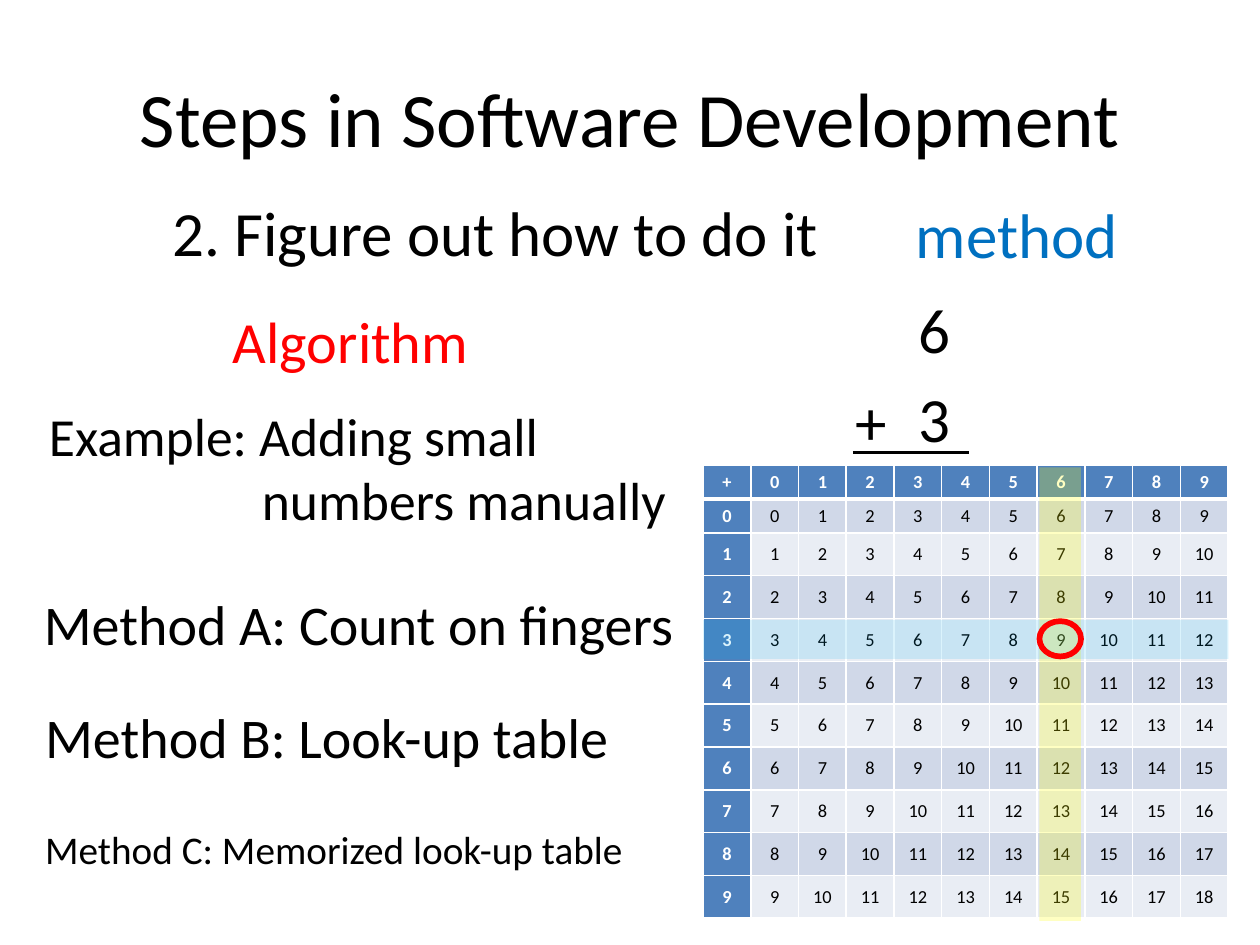
from lxml.etree import SubElement
from pptx import Presentation
from pptx.dml.color import RGBColor
from pptx.enum.shapes import MSO_CONNECTOR, MSO_SHAPE
from pptx.enum.text import MSO_ANCHOR as Anchor, PP_ALIGN as Align
from pptx.oxml.ns import qn
from pptx.util import Inches, Pt

FONT = "Calibri"
BLACK, WHITE, RED, HEADER = "000000", "FFFFFF", "FF0000", "4F81BD"
BANDS = ("D0D8E8", "E9EDF4")
TITLE = "Steps in Software Development"
LABELS = [
    ("2. Figure out how to do it", (1.27, 1.49, 6.39, 0.88), 36, BLACK),
    ("Algorithm", (1.75, 2.37, 2.26, 0.57), 33.3, RED),
    ("method", (7.17, 1.5, 1.92, 0.72), 36, "0070C0"),
]
METHODS = [
    ("Example: Adding small numbers manually", (0.29, 3.15, 5.33, 1.28), 30.6),
    ("Method A: Count on fingers", (0.25, 4.63, 5.33, 0.72), 32),
    ("Method B: Look-up table", (0.26, 5.53, 4.83, 0.72), 32),
    ("Method C: Memorized look-up table", (0.26, 6.5, 5.22, 0.5), 22.4),
]
SUM = [("6\n3", (7.19, 2.26, 0.5, 1.5)), ("+", (6.69, 2.99, 0.5, 0.75))]
SUM_LINE = (6.77, 3.59, 7.69, 3.59)
DIGITS = range(10)
SUMS = [["+", *DIGITS]] + [[row, *(row + column for column in DIGITS)] for row in DIGITS]
TABLE_AT = (5.58, 3.69, 4.17, 3.6)
ROW_HEIGHTS = [0.27] * 2 + [0.34] * 9
HIGHLIGHTS = [("FFFF00", 24, (8.25, 3.71, 0.33, 3.6)), ("00B0F0", 14, (5.58, 4.92, 4.17, 0.31))]
ANSWER_AT = (8.25, 4.93, 0.33, 0.28)


def inches(values):
    return [Inches(value) for value in values]


def color(value):
    return RGBColor.from_string(value)


def write(para, text, size, shade=BLACK, bold=False):
    span = para.add_run()
    span.text = str(text)
    for name, value in {"name": FONT, "size": Pt(size), "bold": bold}.items():
        setattr(span.font, name, value)
    span.font.color.rgb = color(shade)
    return span


def add_text(shapes, text, place, size, shade=BLACK, hanging=0):
    box = shapes.add_textbox(*inches(place))
    frame = box.text_frame
    frame.word_wrap = True
    for index, line in enumerate(text.split("\n")):
        para = frame.add_paragraph() if index else frame.paragraphs[0]
        if index:
            para.space_before = Pt(size * 0.2)
        if hanging:
            layout = para._p.get_or_add_pPr()
            layout.set("marL", str(Inches(hanging)))
            layout.set("indent", str(-Inches(hanging)))
        write(para, line, size, shade)
    return box


def add_border(cell, side, width):
    line = SubElement(cell._tc.get_or_add_tcPr(), qn(f"a:ln{side}"), w=str(Pt(width)))
    SubElement(SubElement(line, qn("a:solidFill")), qn("a:srgbClr"), val=WHITE)


def format_cell(cell, value, row, column):
    heading = row == 0 or column == 0
    thick_side = {0: "B", 1: "T"}.get(row)
    for side in "LRTB":
        add_border(cell, side, 3 if side == thick_side else 1)
    cell.fill.solid()
    cell.fill.fore_color.rgb = color(HEADER if heading else BANDS[(row - 1) % 2])
    cell.vertical_anchor = Anchor.MIDDLE
    cell.margin_top = cell.margin_bottom = Inches(0.03)
    para = cell.text_frame.paragraphs[0]
    para.alignment = Align.CENTER
    write(para, value, 10.5, WHITE if heading else BLACK, heading)


def add_sum_table(page):
    size = len(SUMS)
    table = page.shapes.add_table(size, size, *inches(TABLE_AT)).table
    for column in table.columns:
        column.width = Inches(TABLE_AT[2] / size)
    for row, height in zip(table.rows, ROW_HEIGHTS):
        row.height = Inches(height)
    for row, values in enumerate(SUMS):
        for column, value in enumerate(values):
            format_cell(table.cell(row, column), value, row, column)


def add_sum(page):
    group = page.shapes.add_group_shape()
    for text, place in SUM:
        add_text(group.shapes, text, place, 36)
    line = group.shapes.add_connector(MSO_CONNECTOR.STRAIGHT, *inches(SUM_LINE))
    line.line.color.rgb = color(BLACK)
    line.line.width = Pt(2)
    SubElement(line._element.spPr, qn("a:effectLst"))


def add_highlights(page):
    for shade, opacity, place in HIGHLIGHTS:
        band = page.shapes.add_shape(MSO_SHAPE.RECTANGLE, *inches(place))
        band.shadow.inherit = False
        band.line.fill.background()
        band.fill.solid()
        band.fill.fore_color.rgb = color(shade)
        tint = band._element.spPr.find(qn("a:solidFill"))[0]
        SubElement(tint, qn("a:alpha"), val=str(opacity * 1000))
    ring = page.shapes.add_shape(MSO_SHAPE.OVAL, *inches(ANSWER_AT))
    ring.shadow.inherit = False
    ring.fill.background()
    ring.line.color.rgb = color(RED)
    ring.line.width = Pt(3.25)


def main():
    """Build the slide on adding small numbers with a look-up table."""
    deck = Presentation()
    deck.slide_width, deck.slide_height = inches((10, 7.5))
    page = deck.slides.add_slide(deck.slide_layouts[5])
    title = page.shapes.title
    title.left, title.top, title.width, title.height = inches((0.5, 0.3, 9, 1.25))
    title.text_frame.vertical_anchor = Anchor.MIDDLE
    title.text_frame.paragraphs[0].alignment = Align.CENTER
    write(title.text_frame.paragraphs[0], TITLE, 44)
    for text, place, size, shade in LABELS:
        add_text(page.shapes, text, place, size, shade)
    for text, place, size in METHODS:
        add_text(page.shapes, text, place, size, hanging=1.69)
    add_sum(page)
    add_sum_table(page)
    add_highlights(page)
    deck.save("out.pptx")


if __name__ == "__main__":
    main()
